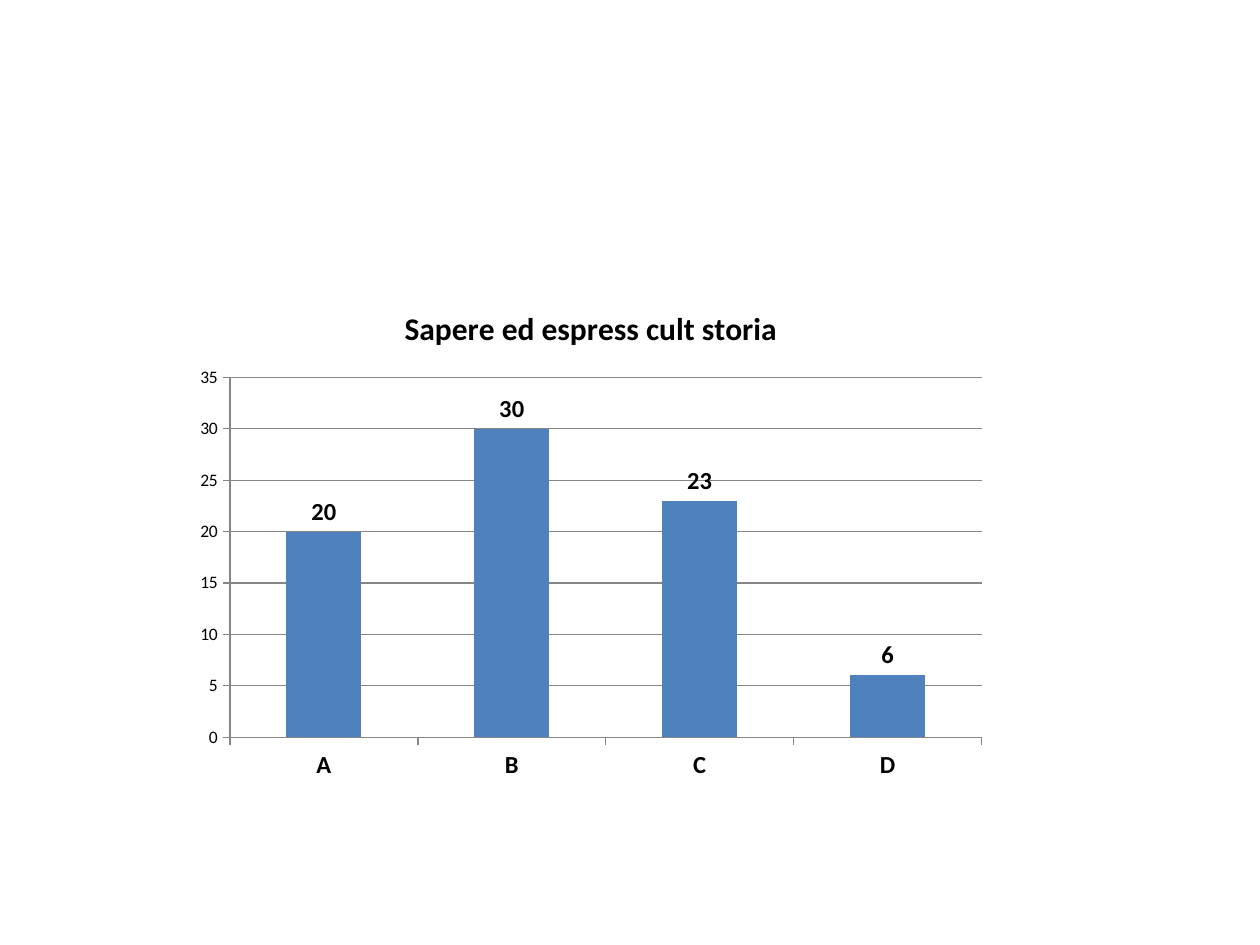
from dataclasses import dataclass

from pptx import Presentation
from pptx.chart.data import CategoryChartData
from pptx.dml.color import RGBColor
from pptx.enum.chart import XL_CHART_TYPE, XL_LABEL_POSITION, XL_TICK_MARK
from pptx.util import Inches, Pt


@dataclass(frozen=True)
class Theme:
    font: str = "Calibri"
    text: str = "000000"
    bar: str = "4F81BD"
    line: str = "868686"
    title_size: int = 18
    label_size: int = 14
    axis_size: int = 10
    line_width: float = 0.75


@dataclass(frozen=True)
class Grade:
    name: str
    pupils: int


THEME = Theme()
TITLE = "Sapere ed espress cult storia"
GRADES = [Grade("A", 20), Grade("B", 30), Grade("C", 23), Grade("D", 6)]


def format_font(font, *, size: int, bold: bool = False) -> None:
    font.name = THEME.font
    font.size = Pt(size)
    font.bold = bold
    font.color.rgb = RGBColor.from_string(THEME.text)


def write_text(tf, text: str, **style) -> None:
    p = tf.paragraphs[0]
    r = p.add_run()
    r.text = text
    format_font(r.font, **style)


def format_line(line) -> None:
    line.color.rgb = RGBColor.from_string(THEME.line)
    line.width = Pt(THEME.line_width)


def format_axis(axis, **style) -> None:
    axis.major_tick_mark = XL_TICK_MARK.OUTSIDE
    axis.minor_tick_mark = XL_TICK_MARK.NONE
    format_line(axis.format.line)
    format_font(axis.tick_labels.font, **style)


def add_grade_chart(s, left, top, width, height) -> None:
    data = CategoryChartData()
    data.categories = [grade.name for grade in GRADES]
    data.add_series(TITLE, [grade.pupils for grade in GRADES])
    chart = s.shapes.add_chart(
        XL_CHART_TYPE.COLUMN_CLUSTERED, left, top, width, height, data
    ).chart
    format_font(chart.font, size=THEME.axis_size)
    chart.has_legend = False
    chart.has_title = True
    write_text(chart.chart_title.text_frame, TITLE, size=THEME.title_size, bold=True)
    chart.chart_title.include_in_layout = False

    format_axis(chart.category_axis, size=THEME.label_size, bold=True)
    format_axis(chart.value_axis, size=THEME.axis_size)
    chart.value_axis.minimum_scale = 0
    chart.value_axis.maximum_scale = 35
    chart.value_axis.major_unit = 5
    chart.value_axis.has_major_gridlines = True
    format_line(chart.value_axis.major_gridlines.format.line)

    plot = chart.plots[0]
    plot.gap_width = 150
    plot.vary_by_categories = False
    series = plot.series[0]
    series.format.fill.solid()
    series.format.fill.fore_color.rgb = RGBColor.from_string(THEME.bar)
    labels = series.data_labels
    labels.show_value = True
    labels.position = XL_LABEL_POSITION.OUTSIDE_END
    format_font(labels.font, size=THEME.label_size, bold=True)


def main() -> None:
    prs = Presentation()
    prs.slide_width = Inches(10)
    prs.slide_height = Inches(7.5)
    s = prs.slides.add_slide(prs.slide_layouts[6])
    w, h = prs.slide_width, prs.slide_height
    add_grade_chart(s, int(w * 0.146), int(h * 0.3), int(w * 0.646), int(h * 0.536))
    prs.save("out.pptx")


if __name__ == "__main__":
    main()
